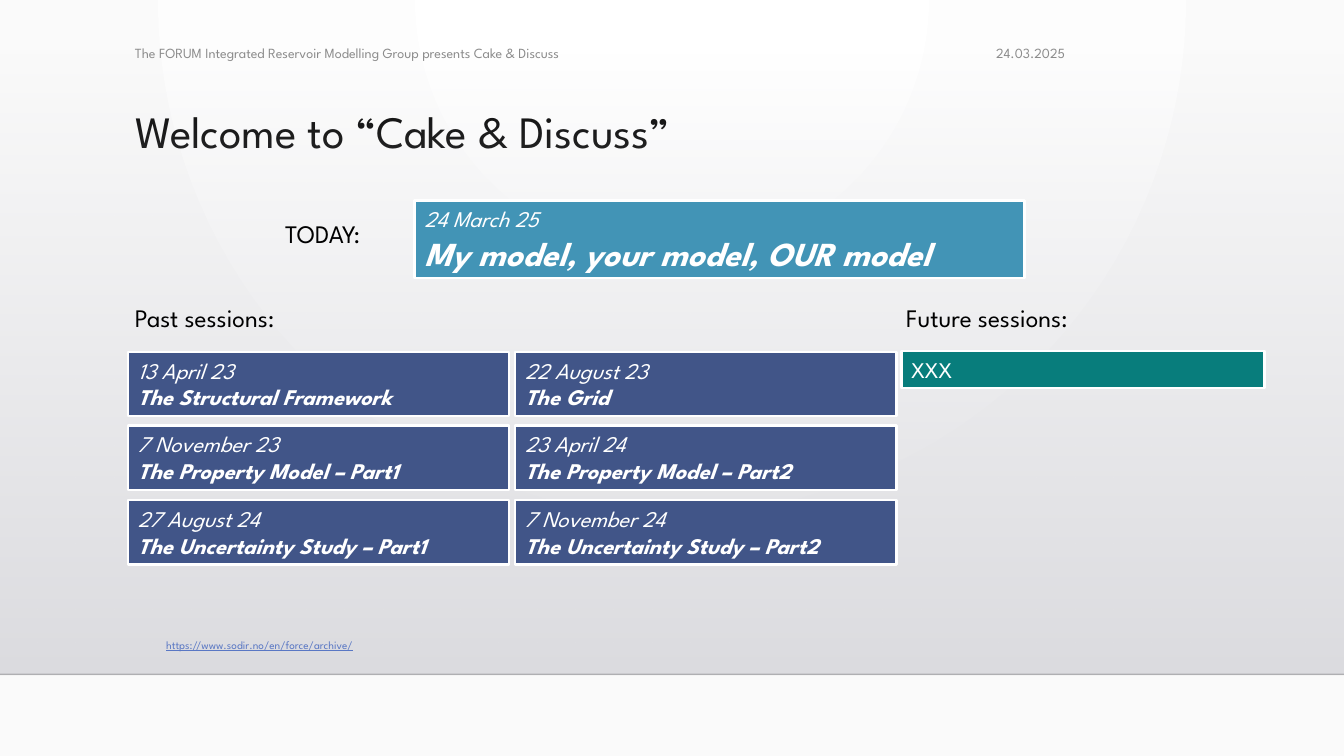
from lxml.etree import SubElement
from pptx import Presentation
from pptx.dml.color import RGBColor
from pptx.enum.shapes import MSO_CONNECTOR, MSO_SHAPE
from pptx.enum.text import MSO_ANCHOR, MSO_AUTO_SIZE, PP_ALIGN
from pptx.oxml.ns import qn
from pptx.util import Pt

PX = 9144
WIDE, HIGH, FLOOR = 1333, 750, 669
FONT = "League Spartan"
BLACK = RGBColor(0x00, 0x00, 0x00)
WHITE = RGBColor(0xFF, 0xFF, 0xFF)
PALE = RGBColor(0xFA, 0xFA, 0xFA)
MIST = RGBColor(0xDC, 0xDC, 0xE0)
HAZE = RGBColor(0xDE, 0xDE, 0xE2)
RULE = RGBColor(0x00, 0x00, 0x01)
GRAY = RGBColor(0x8C, 0x8C, 0x8C)
SKY = RGBColor(0x42, 0x94, 0xB6)
TEAL = RGBColor(0x08, 0x7D, 0x7C)
NAVY = RGBColor(0x41, 0x55, 0x88)
LINK = RGBColor(0x59, 0x77, 0xC4)

PAST = [
    ("13 April 23", "The Structural Framework"),
    ("22 August 23", "The Grid"),
    ("7 November 23", "The Property Model – Part1"),
    ("23 April 24", "The Property Model – Part2"),
    ("27 August 24", "The Uncertainty Study – Part1"),
    ("7 November 24", "The Uncertainty Study – Part2"),
]


class Deck:
    """Holds the style and the current slide, and draws each kind of element."""

    def __init__(self):
        self.show = Presentation()
        self.show.slide_width, self.show.slide_height = WIDE * PX, HIGH * PX
        self.slide = self.show.slides.add_slide(self.show.slide_layouts[5])
        self.shapes = self.slide.shapes

    def place(self, *box):
        return [side * PX for side in box]

    def fade(self, root, share):
        color = next(root.iter(qn("a:srgbClr")))
        SubElement(color, qn("a:alpha")).set("val", str(share * 1000))

    def blend(self, fill, *colors):
        fill.gradient()
        for spot, (stop, color) in enumerate(zip(fill.gradient_stops, colors)):
            stop.color.rgb = color
            stop.position = spot

    def backdrop(self):
        self.blend(self.slide.background.fill, WHITE, PALE)
        grad = next(self.slide._element.iter(qn("a:gradFill")))
        grad.remove(grad.find(qn("a:lin")))
        ring = SubElement(grad, qn("a:path"))
        ring.set("path", "circle")
        focus = SubElement(ring, qn("a:fillToRect"))
        for side, share in zip("ltrb", (43, 0, 43, 100)):
            focus.set(side, str(share * 1000))

    def shade(self, *box):
        panel = self.shapes.add_shape(MSO_SHAPE.RECTANGLE, *self.place(*box))
        panel.shadow.inherit = False
        self.blend(panel.fill, MIST, HAZE)
        panel.fill.gradient_angle = 270
        self.fade(panel._element, 0)
        panel.line.fill.background()

    def rule(self, *ends):
        line = self.shapes.add_connector(MSO_CONNECTOR.STRAIGHT, *self.place(*ends))
        line.line.color.rgb = RULE
        line.line.width = Pt(1)
        props = line._element.spPr
        self.fade(props, 20)
        SubElement(props, qn("a:effectLst"))

    def style(self, para, text, size, color):
        para.text = text
        para.alignment = PP_ALIGN.LEFT
        font = para.font
        font.name, font.size, font.color.rgb = FONT, Pt(size), color
        return para

    def title(self, text, *box):
        head = self.shapes.title
        head.left, head.top, head.width, head.height = self.place(*box)
        frame = head.text_frame
        frame.vertical_anchor = MSO_ANCHOR.TOP
        frame.auto_size = MSO_AUTO_SIZE.NONE
        self.style(frame.paragraphs[0], text, 32, BLACK).line_spacing = 0.9

    def header(self, text, *box, align=PP_ALIGN.LEFT):
        frame = self.shapes.add_textbox(*self.place(*box)).text_frame
        frame.word_wrap = True
        frame.vertical_anchor = MSO_ANCHOR.MIDDLE
        self.style(frame.paragraphs[0], text, 10, GRAY).alignment = align

    def label(self, text, *box, size=18, color=BLACK):
        frame = self.shapes.add_textbox(*self.place(*box)).text_frame
        frame.word_wrap = False
        frame.auto_size = MSO_AUTO_SIZE.SHAPE_TO_FIT_TEXT
        return self.style(frame.paragraphs[0], text, size, color)

    def card(self, color, first, *box, topic=None, size=16):
        card = self.shapes.add_shape(MSO_SHAPE.RECTANGLE, *self.place(*box))
        card.shadow.inherit = False
        card.fill.solid()
        card.fill.fore_color.rgb = color
        card.line.color.rgb = WHITE
        card.line.width = Pt(1.75)
        frame = card.text_frame
        frame.word_wrap = True
        frame.vertical_anchor = MSO_ANCHOR.TOP
        frame.auto_size = MSO_AUTO_SIZE.SHAPE_TO_FIT_TEXT
        top = self.style(frame.paragraphs[0], first, 16, WHITE)
        if topic:
            top.font.italic = True
            main = self.style(frame.add_paragraph(), topic, size, WHITE)
            main.font.italic = main.font.bold = True


def main():
    deck = Deck()
    deck.backdrop()
    deck.shade(0, 51, WIDE, FLOOR - 51)
    deck.rule(0, FLOOR, WIDE, FLOOR)
    deck.title("Welcome to “Cake & Discuss”", 124, 104, 1050, 115)
    deck.header("24.03.2025", 791, 36, 275, 34, align=PP_ALIGN.RIGHT)
    deck.header("The FORUM Integrated Reservoir Modelling Group presents Cake & Discuss",
                124, 36, 649, 34)
    deck.label("TODAY:", 273, 212, 112, 40)
    deck.card(SKY, "24 March 25", 411, 199, 605, 77,
              topic="My model, your model, OUR model", size=24)
    deck.label("Past sessions:", 124, 295, 177, 40)
    for spot, (date, topic) in enumerate(PAST):
        row, col = divmod(spot, 2)
        deck.card(NAVY, date, 127 + 384 * col, 349 + 147 * row // 2, 378, 64, topic=topic)
    deck.label("Future sessions:", 889, 295, 203, 40)
    deck.card(TEAL, "XXX", 894, 348, 360, 37)
    link = deck.label("https://www.sodir.no/en/force/archive/", 155, 628, 237, 24,
                      size=8, color=LINK)
    link.font.underline = True
    deck.show.save("out.pptx")


if __name__ == "__main__":
    main()
